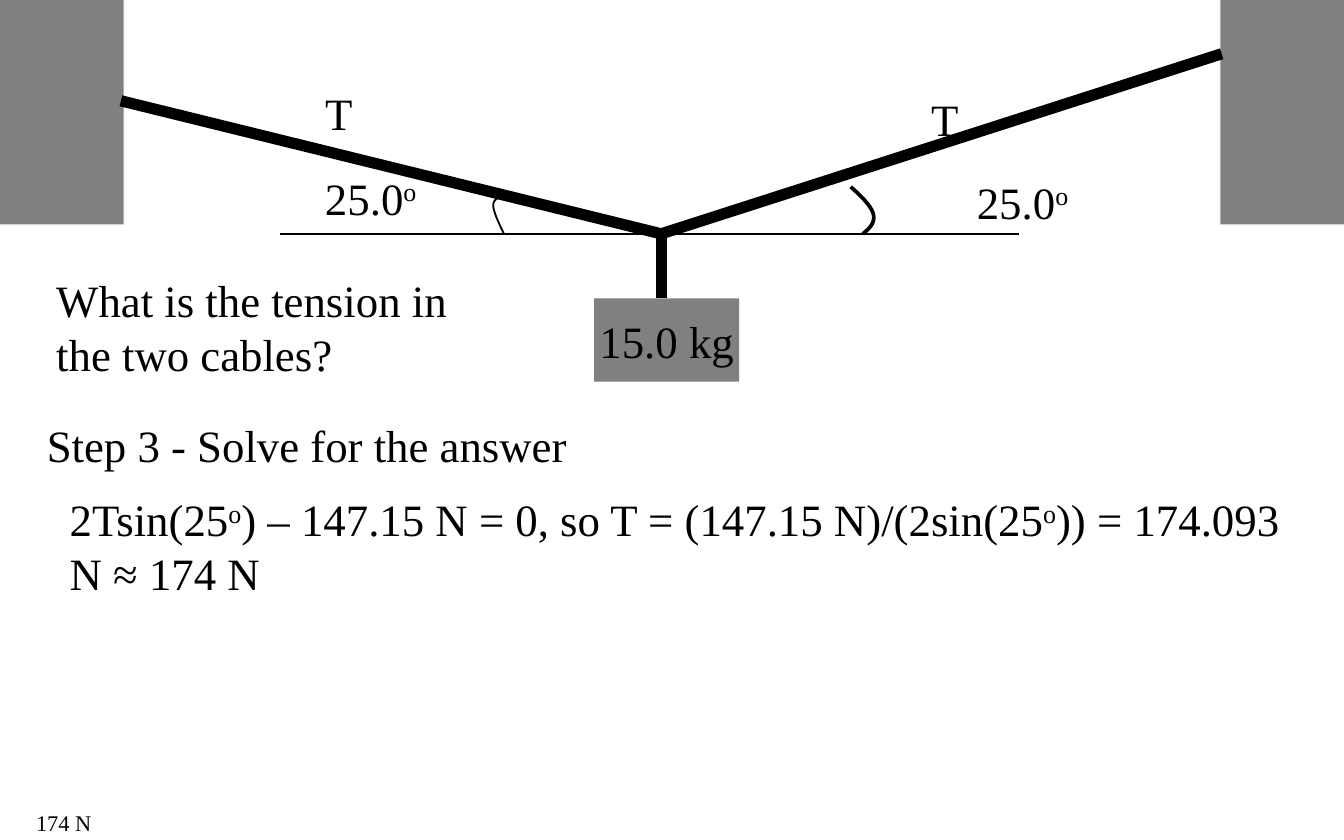
from lxml import etree
from pptx import Presentation
from pptx.dml.color import RGBColor
from pptx.enum import shapes, text
from pptx.oxml import ns
from pptx.util import Inches, Pt

COLORS = {"ink": "000000", "block": "808080"}
FONT = "Times New Roman"
BODY_SIZE = 24
CABLE_WIDTH = 6
CURVE_STEPS = 12


def color(name):
    return RGBColor.from_string(COLORS[name])


def write(frame, parts, size=BODY_SIZE):
    """Fill a frame with parts that alternate normal and superscript."""
    paragraph = frame.paragraphs[0]
    font_format = {"name": FONT, "size": Pt(size)}
    for index, part in enumerate(parts):
        run = paragraph.add_run()
        run.text = part
        for attribute, value in font_format.items():
            setattr(run.font, attribute, value)
        run.font.color.rgb = color("ink")
        if index % 2:
            run.font._element.set("baseline", "30000")
    return paragraph


def add_label(slide, box, parts, size=BODY_SIZE, wrap=False):
    frame = slide.shapes.add_textbox(*map(Inches, box)).text_frame
    frame_format = {
        "word_wrap": wrap,
        "auto_size": text.MSO_AUTO_SIZE.SHAPE_TO_FIT_TEXT,
    }
    for attribute, value in frame_format.items():
        setattr(frame, attribute, value)
    write(frame, parts, size)


def add_block(slide, box):
    block = slide.shapes.add_shape(shapes.MSO_SHAPE.RECTANGLE, *map(Inches, box))
    block.shadow.inherit = False
    block.fill.solid()
    block.fill.fore_color.rgb = color("block")
    block.line.fill.background()
    return block


def set_line(line, width):
    line.color.rgb = color("ink")
    line.width = Pt(width)


def add_line(slide, start, end, width):
    connector = slide.shapes.add_connector(
        shapes.MSO_CONNECTOR.STRAIGHT, *map(Inches, start + end))
    set_line(connector.line, width)
    etree.SubElement(connector._element.spPr, ns.qn("a:effectLst"))


def bezier_points(p0, p1, p2, p3):
    for step in range(1, CURVE_STEPS + 1):
        t = step / CURVE_STEPS
        s = 1 - t
        yield tuple(
            Inches(s**3 * a + 3 * s**2 * t * b + 3 * s * t**2 * c + t**3 * d)
            for a, b, c, d in zip(p0, p1, p2, p3))


def add_angle_arc(slide, controls, width):
    """Draw joined cubic curves; each one starts where the last ended."""
    builder = slide.shapes.build_freeform(*map(Inches, controls[0]))
    for first in range(0, len(controls) - 1, 3):
        builder.add_line_segments(
            list(bezier_points(*controls[first:first + 4])), close=False)
    arc = builder.convert_to_shape()
    arc.shadow.inherit = False
    arc.fill.background()
    set_line(arc.line, width)


def main():
    prs = Presentation()
    prs.slide_width, prs.slide_height = Inches(10), Inches(6.25)
    slide = prs.slides.add_slide(prs.slide_layouts[6])

    # Walls
    for wall_left in (0, 9.08):
        add_block(slide, (wall_left, 0, 0.92, 1.67))

    # Cables meeting at the knot, and the hanging cord
    knot = (4.92, 1.74)
    for cable_end in ((0.9, 0.75), (9.09, 0.4), (4.92, 2.22)):
        add_line(slide, knot, cable_end, CABLE_WIDTH)

    # Hanging mass
    mass = add_block(slide, (4.42, 2.22, 1.08, 0.62)).text_frame
    mass.word_wrap = False
    mass.vertical_anchor = text.MSO_ANCHOR.MIDDLE
    write(mass, ["15.0 kg"]).alignment = text.PP_ALIGN.CENTER

    # Horizontal reference and angle arcs
    add_line(slide, (2.08, 1.74), (7.58, 1.74), 1)
    add_angle_arc(slide, [(6.33, 1.39), (6.41, 1.46), (6.49, 1.54), (6.5, 1.6),
                          (6.51, 1.66), (6.47, 1.7), (6.42, 1.74)], 2)
    add_angle_arc(slide, [(3.75, 1.46), (3.71, 1.47), (3.67, 1.48), (3.67, 1.53),
                          (3.67, 1.57), (3.71, 1.66), (3.75, 1.74)], 1)

    # Angle and tension labels
    for left, top in ((2.32, 1.22), (7.17, 1.25)):
        add_label(slide, (left, top, 0.9, 0.5), ["25.0", "o"])
    for left, top in ((2.32, 0.59), (6.83, 0.63)):
        add_label(slide, (left, top, 0.41, 0.5), ["T"])

    # Question, solution step and answer
    add_label(slide, (0.32, 1.98, 3.18, 0.91),
              ["What is the tension in the two cables?"], wrap=True)
    add_label(slide, (0.25, 3.06, 9.5, 0.5),
              ["Step 3 - Solve for the answer"], wrap=True)
    add_label(slide, (0.42, 3.61, 9.25, 0.91),
              ["2Tsin(25", "o", ") – 147.15 N = 0, so T = (147.15 N)/(2sin(25",
               "o", ")) = 174.093 N ≈ 174 N"], wrap=True)
    add_label(slide, (0.17, 5.97, 0.62, 0.3), ["174 N"], size=12)

    prs.save("out.pptx")


if __name__ == "__main__":
    main()
